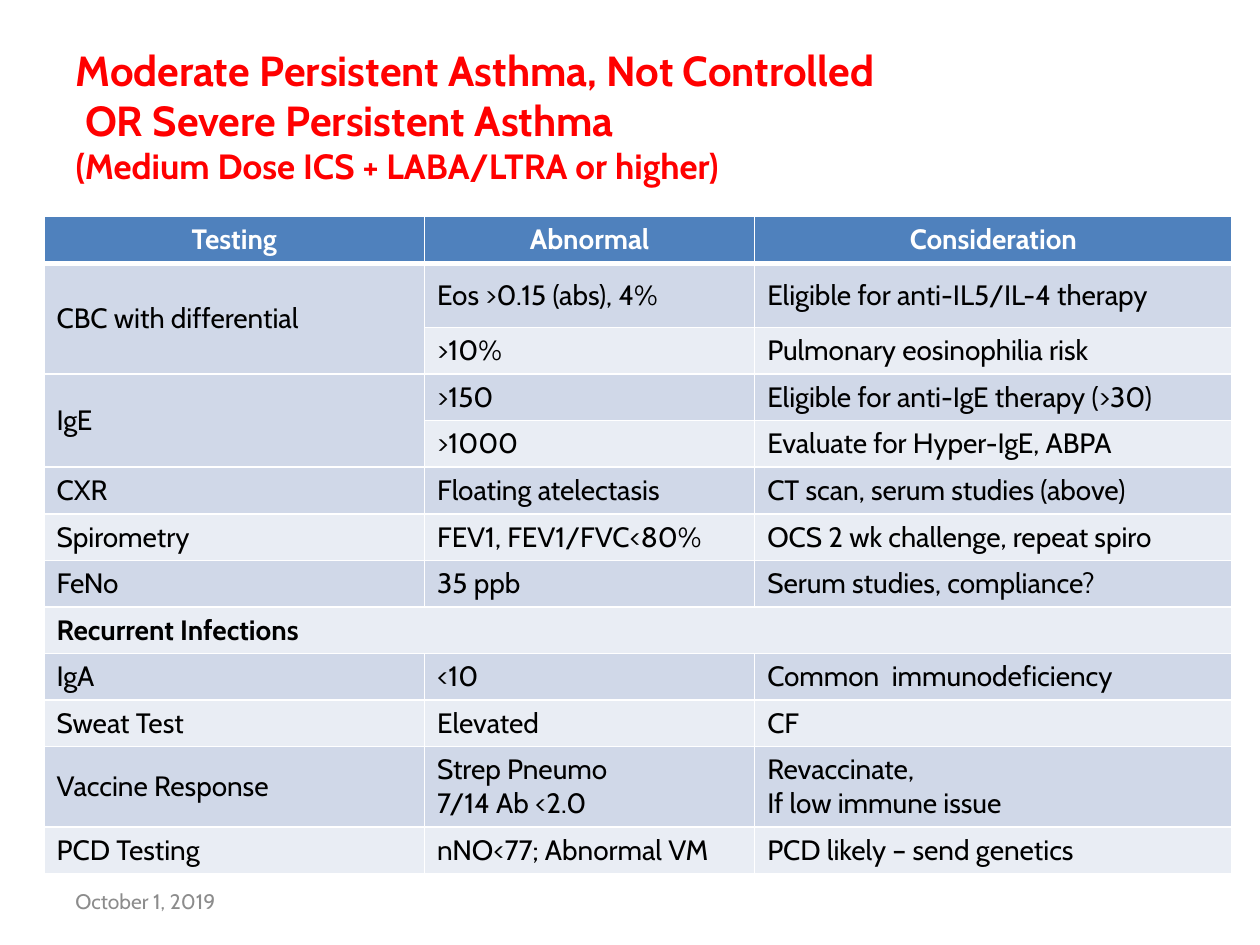
"""Builds the asthma testing table slide."""
from dataclasses import dataclass

from lxml import etree
from pptx import Presentation
from pptx.dml.color import RGBColor
from pptx.enum.text import MSO_ANCHOR, MSO_AUTO_SIZE, PP_ALIGN
from pptx.oxml.ns import qn
from pptx.util import Inches, Pt

TOP, MIDDLE = MSO_ANCHOR.TOP, MSO_ANCHOR.MIDDLE
LEFT, CENTER = PP_ALIGN.LEFT, PP_ALIGN.CENTER
NO_FIT = MSO_AUTO_SIZE.NONE
TITLE_ONLY = 5
COLUMNS, ROWS = 100, 75


@dataclass(frozen=True)
class Theme:
    """Holds the font, colours and type sizes."""
    font: str = "Cabin"
    title: str = "FF0000"
    header: str = "4F81BD"
    bands: tuple = ("E9EDF4", "D0D8E8")
    white: str = "FFFFFF"
    ink: str = "000000"
    muted: str = "8C8C8C"
    title_size: int = 24
    subtitle_size: int = 20
    table_size: int = 16
    date_size: int = 12
    rule: int = 1
    header_rule: int = 3


class SlideBuilder:
    """Draws styled elements on a grid over the current slide."""

    def __init__(self, deck, theme):
        """Adds a title-only slide to the deck."""
        self.deck, self.theme = deck, theme
        self.page = deck.slides.add_slide(deck.slide_layouts[TITLE_ONLY])

    def across(self, columns):
        """Turns grid columns into a length."""
        return round(self.deck.slide_width * columns / COLUMNS)

    def down(self, rows):
        """Turns grid rows into a length."""
        return round(self.deck.slide_height * rows / ROWS)

    def place(self, left, top, width, height):
        """Turns a grid area into slide lengths."""
        return self.across(left), self.down(top), self.across(width), self.down(height)

    def span(self, para, text, size, color, bold=False):
        """Adds one styled run."""
        span = para.add_run()
        span.text = text
        span.font.name = self.theme.font
        span.font.size = Pt(size)
        span.font.bold = bold
        span.font.color.rgb = RGBColor.from_string(color)

    def title(self, area, lines):
        """Fills the title with (text, size) lines."""
        box = self.page.shapes.title
        box.left, box.top, box.width, box.height = self.place(*area)
        frame = box.text_frame
        frame.auto_size, frame.vertical_anchor = NO_FIT, TOP
        para = frame.paragraphs[0]
        para.alignment = LEFT
        for index, (text, size) in enumerate(lines):
            if index:
                para.add_line_break()
            self.span(para, text, size, self.theme.title, True)

    def label(self, area, text):
        """Adds a small muted text box."""
        frame = self.page.shapes.add_textbox(*self.place(*area)).text_frame
        frame.word_wrap, frame.vertical_anchor = True, MIDDLE
        self.span(frame.paragraphs[0], text, self.theme.date_size, self.theme.muted)

    def borders(self, cell, row):
        """Draws cell rules, heavier below the header."""
        heavy = {0: "lnB", 1: "lnT"}.get(row)
        properties = cell._tc.get_or_add_tcPr()
        for side in ("lnL", "lnR", "lnT", "lnB"):
            width = self.theme.header_rule if side == heavy else self.theme.rule
            line = etree.SubElement(properties, qn(f"a:{side}"), w=str(Pt(width)))
            fill = etree.SubElement(line, qn("a:solidFill"))
            etree.SubElement(fill, qn("a:srgbClr"), val=self.theme.white)

    def cell(self, cell, row, text, bold):
        """Styles and fills one table cell."""
        theme = self.theme
        header = row == 0
        self.borders(cell, row)
        cell.fill.solid()
        fill = theme.header if header else theme.bands[row % 2]
        cell.fill.fore_color.rgb = RGBColor.from_string(fill)
        cell.vertical_anchor = MIDDLE
        for index, line in enumerate(text.split("\n") if text else ()):
            frame = cell.text_frame
            para = frame.add_paragraph() if index else frame.paragraphs[0]
            para.alignment = CENTER if header else LEFT
            color = theme.white if header else theme.ink
            self.span(para, line, theme.table_size, color, header or bold)

    def table(self, left, top, widths, heights, rows, merges, bold_rows):
        """Adds a banded table with merged cells."""
        area = self.place(left, top, sum(widths), sum(heights))
        table = self.page.shapes.add_table(len(rows), len(widths), *area).table
        for column, width in zip(table.columns, widths):
            column.width = self.across(width)
        for line, height in zip(table.rows, heights):
            line.height = self.down(height)
        for row, texts in enumerate(rows):
            for column, text in enumerate(texts):
                self.cell(table.cell(row, column), row, text, row in bold_rows)
        for start, end in merges:
            table.cell(*start).merge(table.cell(*end))


TESTS = [
    ("Testing", "Abnormal", "Consideration"),
    ("CBC with differential", "Eos >0.15 (abs), 4%", "Eligible for anti-IL5/IL-4 therapy"),
    ("", ">10%", "Pulmonary eosinophilia risk"),
    ("IgE", ">150", "Eligible for anti-IgE therapy (>30)"),
    ("", ">1000", "Evaluate for Hyper-IgE, ABPA"),
    ("CXR", "Floating atelectasis", "CT scan, serum studies (above)"),
    ("Spirometry", "FEV1, FEV1/FVC<80%", "OCS 2 wk challenge, repeat spiro"),
    ("FeNo", "35 ppb", "Serum studies, compliance?"),
    ("Recurrent Infections", "", ""),
    ("IgA", "<10", "Common  immunodeficiency"),
    ("Sweat Test", "Elevated", "CF"),
    ("Vaccine Response", "Strep Pneumo\n7/14 Ab <2.0", "Revaccinate,\nIf low immune issue"),
    ("PCD Testing", "nNO<77; Abnormal VM", "PCD likely – send genetics"),
]
MERGES = [((1, 0), (2, 0)), ((3, 0), (4, 0)), ((8, 0), (8, 2))]
HEIGHTS = [3.6, 5.1] + [3.7] * 9 + [6.3, 3.7]


def main():
    """Builds and saves the deck."""
    deck = Presentation()
    deck.slide_width, deck.slide_height = Inches(10), Inches(7.5)
    theme = Theme()
    slide = SlideBuilder(deck, theme)
    slide.title((5, 3, 90, 12.5), [
        ("Moderate Persistent Asthma, Not Controlled", theme.title_size),
        (" OR Severe Persistent Asthma", theme.title_size),
        ("(Medium Dose ICS + LABA/LTRA or higher)", theme.subtitle_size),
    ])
    slide.table(3.5, 17.2, (30.2, 26.2, 37.9), HEIGHTS, TESTS, MERGES, {8})
    slide.label((5, 69.5, 23.3, 4), "October 1, 2019")
    deck.save("out.pptx")


if __name__ == "__main__":
    main()
